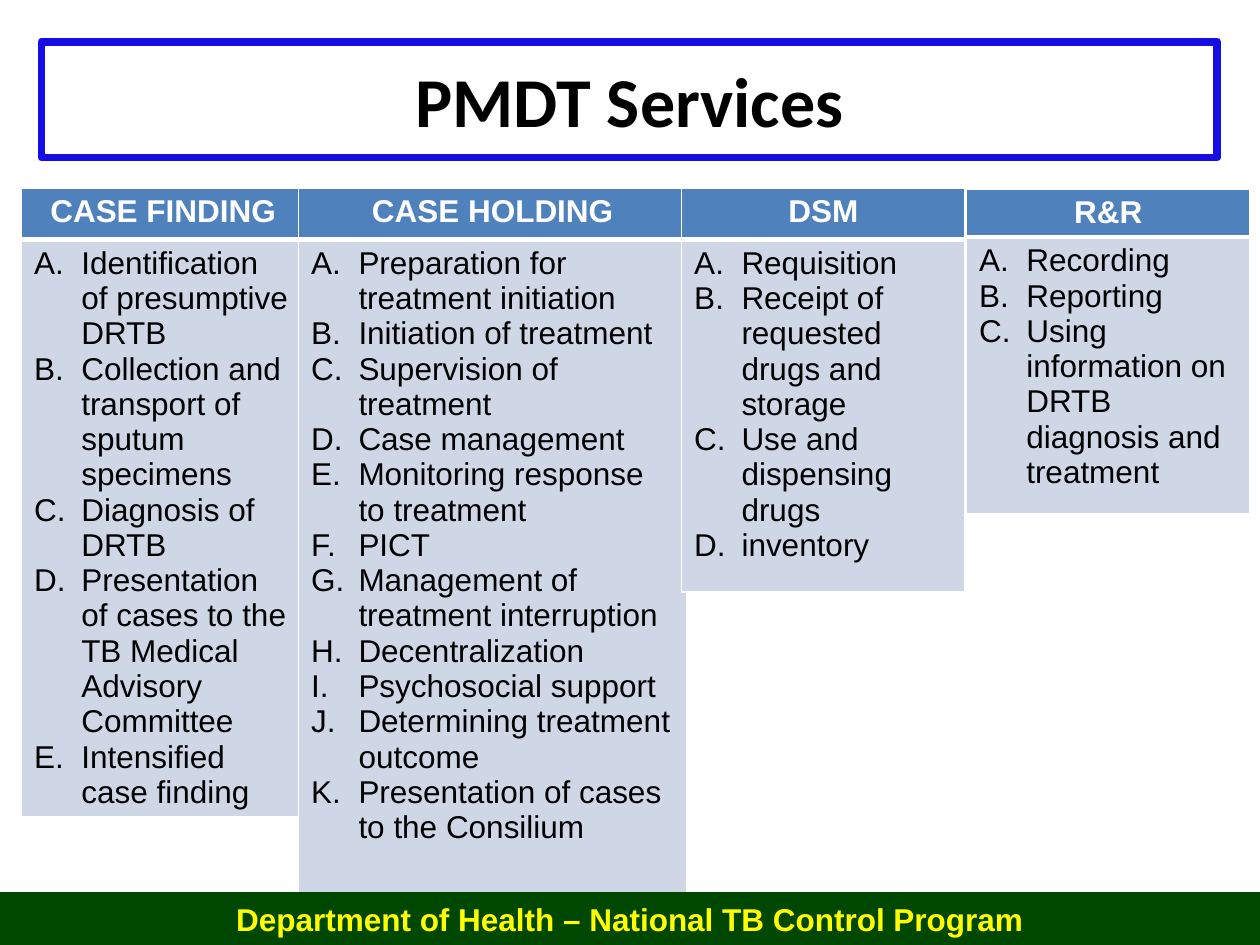
from lxml import etree
from pptx import Presentation
from pptx.dml.color import RGBColor
from pptx.enum.shapes import MSO_SHAPE
from pptx.enum.text import MSO_ANCHOR, PP_ALIGN
from pptx.oxml.ns import qn
from pptx.util import Inches, Pt

RECTANGLE = MSO_SHAPE.RECTANGLE
MIDDLE = MSO_ANCHOR.MIDDLE
CENTER = PP_ALIGN.CENTER

# The slide is a grid of 100 columns by 75 rows of square cells
SLIDE_WIDTH, SLIDE_HEIGHT = Inches(10), Inches(7.5)
CELL = SLIDE_WIDTH / 100
LIST_INDENT = 3.75

COLORS = {
    "black": "000000",
    "white": "FFFFFF",
    "frame": "160CE4",
    "header": "4F81BD",
    "body": "CFD7E7",
    "footer": "004800",
    "footer_text": "FFFF00",
}

# Left, top, width, header height, body height in grid cells; heading; items
SERVICES = [
    ((1.7, 14.9, 22.5, 4.1, 45.7), "CASE FINDING", [
        "Identification of presumptive DRTB",
        "Collection and transport of sputum specimens",
        "Diagnosis of DRTB",
        "Presentation of cases to the TB Medical Advisory Committee",
        "Intensified case finding",
    ]),
    ((23.7, 14.9, 30.8, 4.1, 52), "CASE HOLDING", [
        "Preparation for treatment initiation",
        "Initiation of treatment",
        "Supervision of treatment",
        "Case management",
        "Monitoring response to treatment",
        "PICT",
        "Management of treatment interruption",
        "Decentralization",
        "Psychosocial support",
        "Determining treatment outcome",
        "Presentation of cases to the Consilium",
    ]),
    ((54.1, 14.9, 22.5, 4.1, 28), "DSM", [
        "Requisition",
        "Receipt of requested drugs and storage",
        "Use and dispensing drugs",
        "inventory",
    ]),
    ((76.7, 15, 22.5, 3.7, 22), "R&R", [
        "Recording",
        "Reporting",
        "Using information on DRTB diagnosis and treatment",
    ]),
]


def grid(count):
    return round(count * CELL)


def color(name):
    return RGBColor.from_string(COLORS[name])


def add_run(paragraph, text, color_name, size=18, font="Arial", bold=True):
    run = paragraph.add_run()
    run.text = text
    run.font.size = Pt(size)
    run.font.name = font
    run.font.bold = bold
    run.font.color.rgb = color(color_name)


def add_banner(slide, box, text, text_color, fill=None, line=None, **font):
    """Place a rectangle with one centred line of text."""
    shape = slide.shapes.add_shape(RECTANGLE, *map(grid, box))
    shape.shadow.inherit = False
    if fill:
        shape.fill.solid()
        shape.fill.fore_color.rgb = color(fill)
    else:
        shape.fill.background()
    if line:
        shape.line.color.rgb = color(line)
        shape.line.width = Pt(4.5)
    else:
        shape.line.fill.background()
    shape.text_frame.word_wrap = True
    shape.text_frame.vertical_anchor = MIDDLE
    paragraph = shape.text_frame.paragraphs[0]
    paragraph.alignment = CENTER
    add_run(paragraph, text, text_color, **font)


def letter_paragraph(paragraph):
    """Number a paragraph A., B., C. with a hanging indent."""
    properties = paragraph._p.get_or_add_pPr()
    properties.set("marL", str(grid(LIST_INDENT)))
    properties.set("indent", str(-grid(LIST_INDENT)))
    bullet_color = etree.SubElement(properties, qn("a:buClr"))
    etree.SubElement(bullet_color, qn("a:srgbClr"), val=COLORS["black"])
    etree.SubElement(properties, qn("a:buFont"), typeface="Arial")
    etree.SubElement(properties, qn("a:buAutoNum"), type="alphaUcPeriod")


def style_cell(cell, fill, borders):
    cell.fill.solid()
    cell.fill.fore_color.rgb = color(fill)
    properties = cell._tc.get_or_add_tcPr()
    for position, (side, width) in enumerate(borders.items()):
        border = etree.Element(qn(f"a:ln{side}"), w=str(Pt(width)))
        solid = etree.SubElement(border, qn("a:solidFill"))
        etree.SubElement(solid, qn("a:srgbClr"), val=COLORS["white"])
        properties.insert(position, border)


def add_service_table(slide, box, heading, items):
    """Place a one-column table: a heading over a lettered list."""
    left, top, width, header_height, body_height = map(grid, box)
    table = slide.shapes.add_table(
        2, 1, left, top, width, header_height + body_height).table
    table.first_row = table.horz_banding = False
    table.columns[0].width = width
    table.rows[0].height = header_height
    table.rows[1].height = body_height

    # Heading
    header, body = table.cell(0, 0), table.cell(1, 0)
    style_cell(header, "header", {"L": 1, "R": 1, "T": 1, "B": 3})
    paragraph = header.text_frame.paragraphs[0]
    paragraph.alignment = CENTER
    add_run(paragraph, heading, "white")

    # Lettered list
    style_cell(body, "body", {"L": 1, "R": 1, "T": 3, "B": 1})
    frame = body.text_frame
    for index, item in enumerate(items):
        paragraph = frame.add_paragraph() if index else frame.paragraphs[0]
        letter_paragraph(paragraph)
        add_run(paragraph, item, "black", bold=False)


def main():
    presentation = Presentation()
    presentation.slide_width = SLIDE_WIDTH
    presentation.slide_height = SLIDE_HEIGHT
    slide = presentation.slides.add_slide(presentation.slide_layouts[6])

    # Title
    add_banner(slide, (3.3, 3.3, 93.3, 9.2), "PMDT Services", "black",
               line="frame", size=40, font="Calibri")
    # Services
    for box, heading, items in SERVICES:
        add_service_table(slide, box, heading, items)
    # Footer
    add_banner(slide, (0, 70.8, 100, 4.2),
               "Department of Health – National TB Control Program",
               "footer_text", fill="footer")

    presentation.save("out.pptx")


if __name__ == "__main__":
    main()
